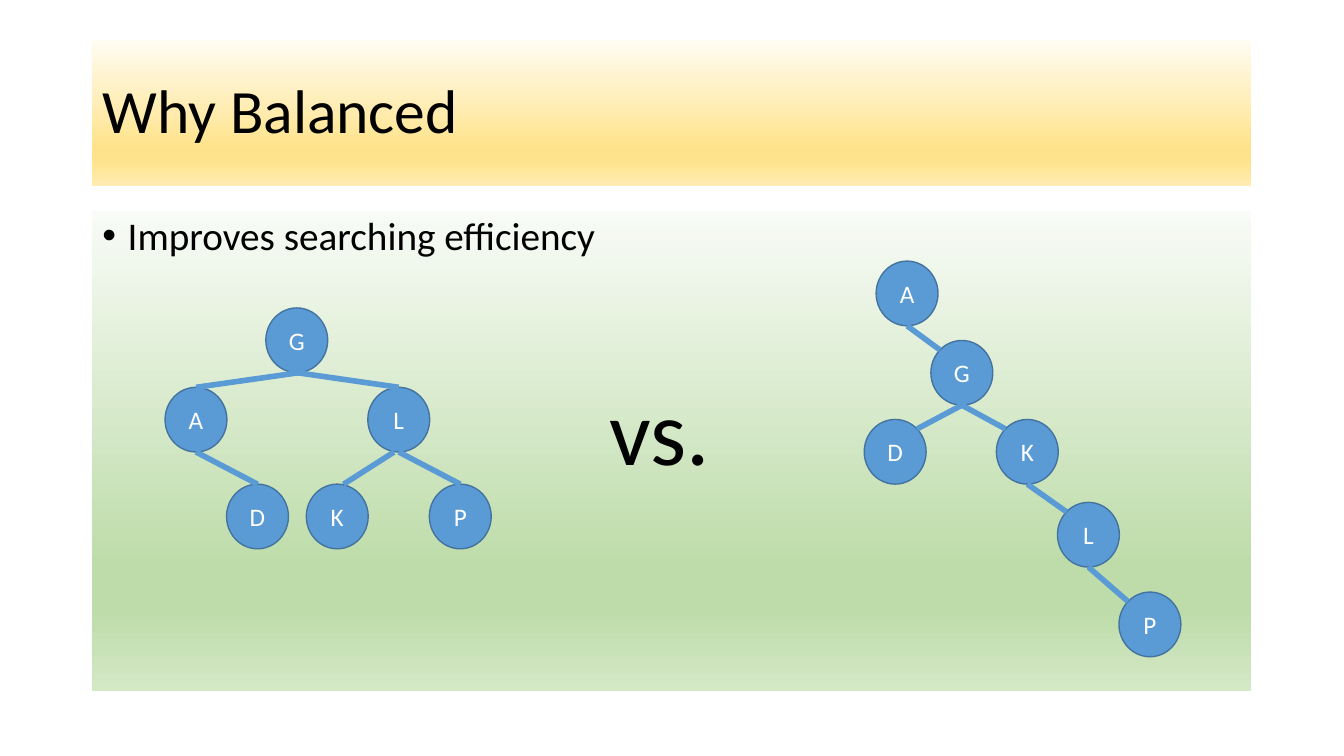
from copy import deepcopy
from math import sqrt

from lxml.etree import SubElement
from pptx import Presentation
from pptx.dml.color import RGBColor
from pptx.enum.shapes import MSO_CONNECTOR, MSO_SHAPE
from pptx.enum.text import MSO_ANCHOR, MSO_AUTO_SIZE, PP_ALIGN
from pptx.oxml.ns import qn
from pptx.util import Cm, Pt

BLACK = RGBColor(0x00, 0x00, 0x00)
WHITE = RGBColor(0xFF, 0xFF, 0xFF)
BLUE = RGBColor(0x5B, 0x9B, 0xD5)
DARK_BLUE = RGBColor(0x43, 0x73, 0x9E)
GOLD = [(0, RGBColor(0xFF, 0xFC, 0xF2)), (0.74, RGBColor(0xFF, 0xE3, 0x8C)),
        (0.83, RGBColor(0xFF, 0xE3, 0x8C)), (1, RGBColor(0xFF, 0xEC, 0xB2))]
GREEN = [(0, RGBColor(0xF8, 0xFB, 0xF6)), (0.74, RGBColor(0xBE, 0xDC, 0xAA)),
         (0.83, RGBColor(0xBE, 0xDC, 0xAA)), (1, RGBColor(0xD4, 0xE8, 0xC6))]

NODE_WIDTH, NODE_HEIGHT = 1.56, 1.63
DIAGONAL = sqrt(0.5) / 2
TOP, TOP_LEFT, TOP_RIGHT = (0.5, 0), (0.5 - DIAGONAL,) * 2, (0.5 + DIAGONAL, 0.5 - DIAGONAL)
BOTTOM = (0.5, 1)

BALANCED_NODES = {"G": (6.7, 7.76), "A": (4.16, 9.76), "L": (9.27, 9.76),
                  "K": (7.72, 12.2), "P": (10.82, 12.2), "D": (5.71, 12.2)}
BALANCED_EDGES = [("G", "L", TOP, 0, 0), ("G", "A", TOP, 0.06, 0), ("A", "D", TOP, 0, 0),
                  ("L", "P", TOP, 0, 0), ("L", "K", TOP, -0.12, 0.16)]
SKEWED_NODES = {"A": (22.08, 6.58), "G": (23.46, 8.58), "D": (21.78, 10.57),
                "K": (25.11, 10.57), "L": (26.65, 12.66), "P": (28.2, 14.92)}
SKEWED_EDGES = [("L", "P", TOP_LEFT, 0, 0), ("K", "L", TOP_LEFT, 0, 0),
                ("G", "K", TOP_LEFT, 0, 0), ("A", "G", TOP_LEFT, 0, 0),
                ("G", "D", TOP_RIGHT, 0, 0)]


class TreeSlide:
    font = "Calibri"

    def __init__(self, deck):
        self.page = deck.slides.add_slide(deck.slide_layouts[6])

    def add_span(self, para, text, size, color):
        span = para.add_run()
        span.text = text
        span.font.name = self.font
        span.font.size = Pt(size)
        span.font.color.rgb = color

    def shape(self, kind, left, top, width, height):
        shape = self.page.shapes.add_shape(kind, Cm(left), Cm(top), Cm(width), Cm(height))
        shape.shadow.inherit = False
        shape.text_frame.word_wrap = True
        return shape

    def panel(self, top, height, stops, text, size, anchor):
        panel = self.shape(MSO_SHAPE.RECTANGLE, 2.33, top, 29.21, height)
        panel.line.fill.background()
        panel.fill.gradient()
        panel.fill.gradient_angle = 270
        stop_list = panel._element.spPr.find(".//" + qn("a:gsLst"))
        for extra in range(len(stops) - len(stop_list)):
            stop_list.append(deepcopy(stop_list[0]))
        for stop, (position, color) in zip(panel.fill.gradient_stops, stops):
            stop.position = position
            stop.color.rgb = color
        panel.text_frame.vertical_anchor = anchor
        para = panel.text_frame.paragraphs[0]
        para.alignment = PP_ALIGN.LEFT
        para.line_spacing = 0.9
        self.add_span(para, text, size, BLACK)
        return para

    def bullet(self, para):
        para.space_before = Pt(10)
        properties = para._p.get_or_add_pPr()
        properties.set("marL", str(Cm(0.64)))
        properties.set("indent", str(-Cm(0.64)))
        SubElement(properties, qn("a:buFont")).set("typeface", "Arial")
        SubElement(properties, qn("a:buChar")).set("char", "•")

    def node(self, name, left, top):
        node = self.shape(MSO_SHAPE.OVAL, left, top, NODE_WIDTH, NODE_HEIGHT)
        node.fill.solid()
        node.fill.fore_color.rgb = BLUE
        node.line.color.rgb = DARK_BLUE
        node.line.width = Pt(1)
        node.text_frame.vertical_anchor = MSO_ANCHOR.MIDDLE
        para = node.text_frame.paragraphs[0]
        para.alignment = PP_ALIGN.CENTER
        self.add_span(para, name, 18, WHITE)

    def edge(self, start, end):
        edge = self.page.shapes.add_connector(
            MSO_CONNECTOR.STRAIGHT, *(Cm(value) for value in start + end))
        edge.line.color.rgb = BLUE
        edge.line.width = Pt(4)
        SubElement(edge._element.spPr, qn("a:effectLst"))

    def tree(self, nodes, edges):
        def point(name, site, shift):
            left, top = nodes[name]
            return left + site[0] * NODE_WIDTH + shift, top + site[1] * NODE_HEIGHT

        for name, (left, top) in nodes.items():
            self.node(name, left, top)
        for parent, child, site, start_shift, end_shift in edges:
            self.edge(point(parent, BOTTOM, start_shift), point(child, site, end_shift))

    def label(self, text, left, top, width, height, size):
        box = self.page.shapes.add_textbox(Cm(left), Cm(top), Cm(width), Cm(height))
        box.text_frame.word_wrap = False
        box.text_frame.auto_size = MSO_AUTO_SIZE.SHAPE_TO_FIT_TEXT
        self.add_span(box.text_frame.paragraphs[0], text, size, BLACK)


def main():
    deck = Presentation()
    deck.slide_width, deck.slide_height = Cm(33.87), Cm(19.05)
    slide = TreeSlide(deck)
    slide.panel(1.01, 3.68, GOLD, "Why Balanced", 44, MSO_ANCHOR.MIDDLE)
    slide.bullet(slide.panel(5.33, 12.09, GREEN, "Improves searching efficiency", 28,
                             MSO_ANCHOR.TOP))
    slide.tree(BALANCED_NODES, BALANCED_EDGES)
    slide.tree(SKEWED_NODES, SKEWED_EDGES)
    slide.label("vs.", 15.11, 9.27, 3.61, 3.07, 66)
    deck.save("out.pptx")


if __name__ == "__main__":
    main()
